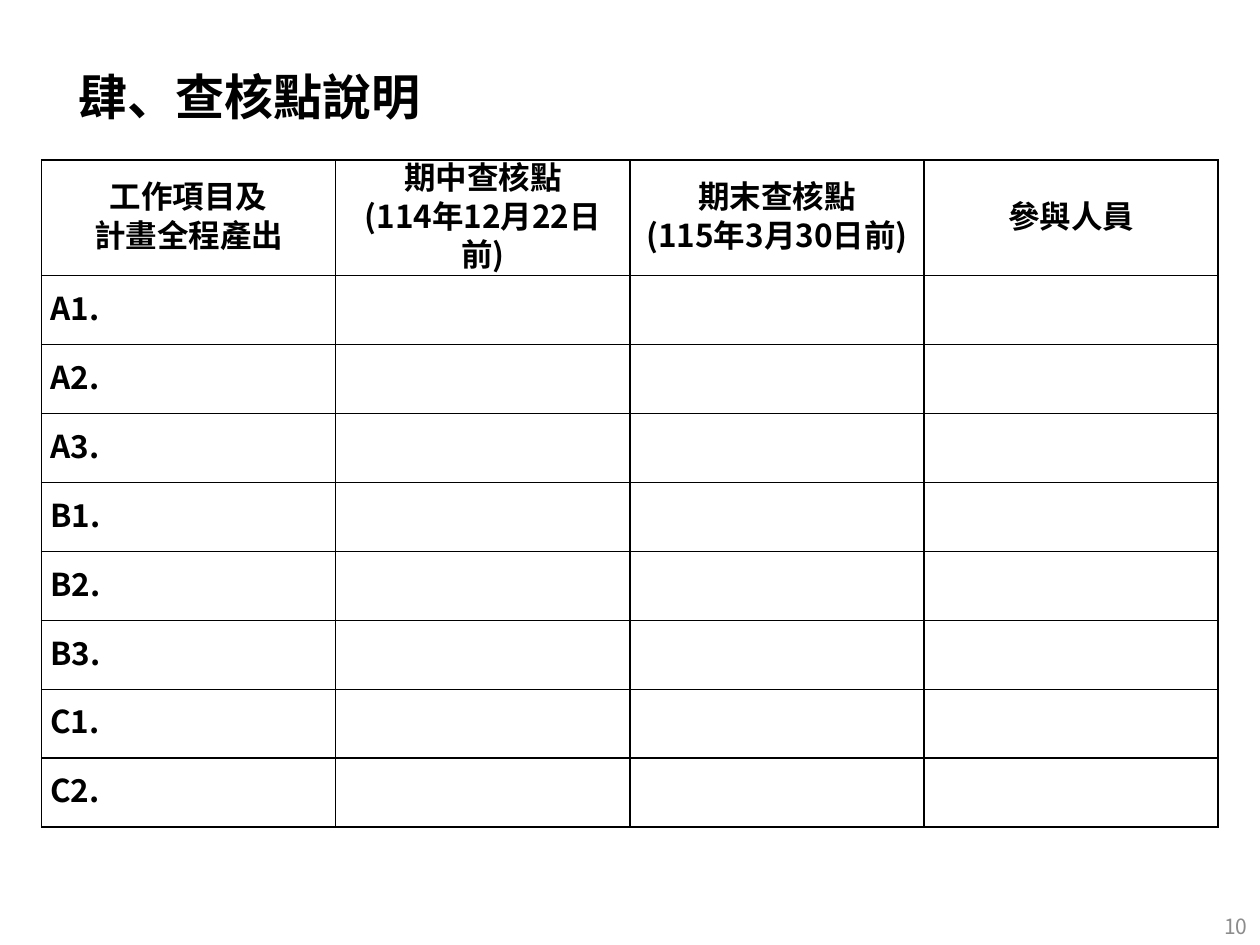
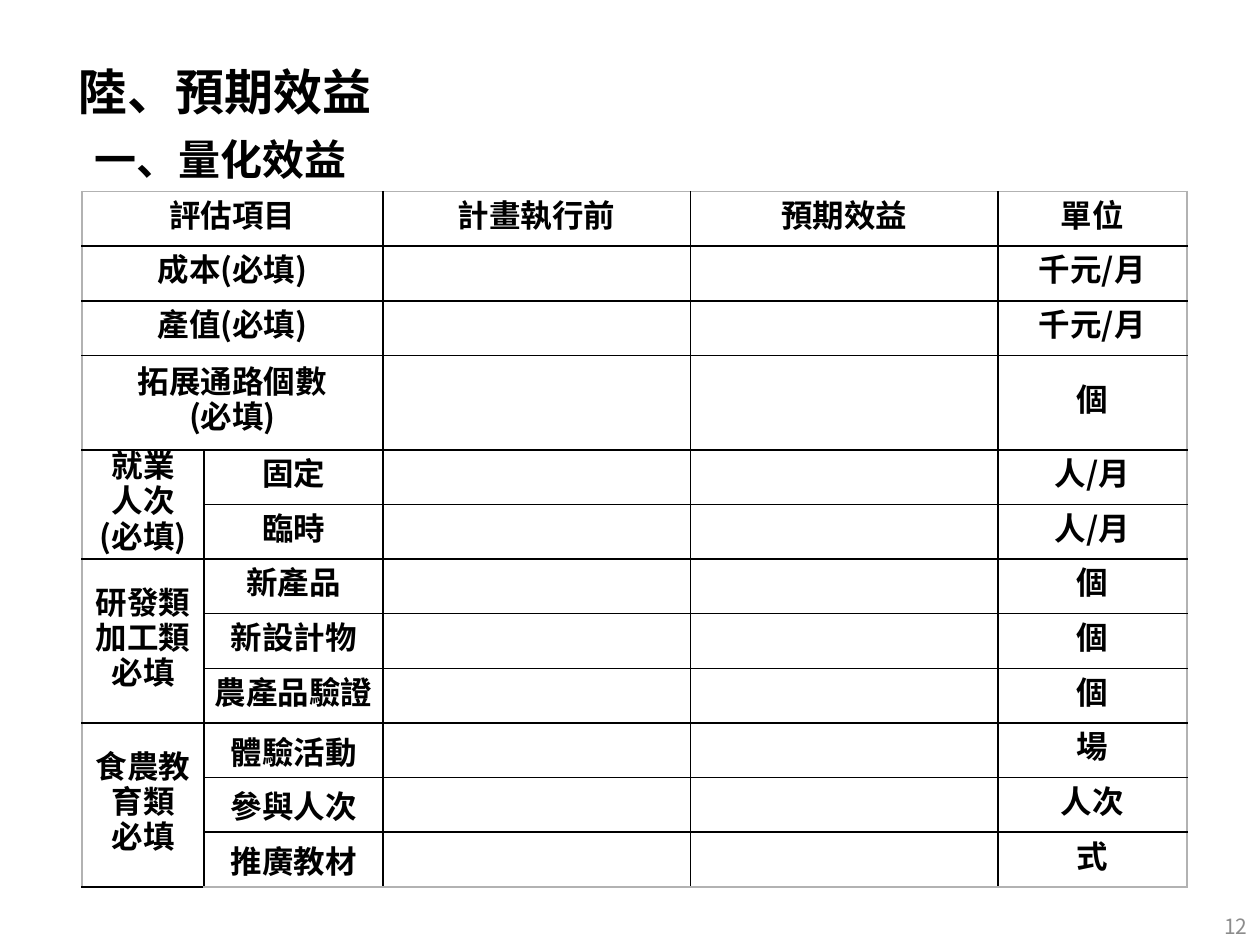
from dataclasses import dataclass

from lxml import etree
from pptx import Presentation
from pptx import util as u
from pptx.dml.color import RGBColor
from pptx.enum import text
from pptx.oxml.ns import qn


@dataclass(frozen=True)
class Theme:
    """Colours, font and type sizes shared by the slides."""
    font: str = "Noto Sans CJK SC"
    ink: str = "000000"
    paper: str = "FFFFFF"
    muted: str = "8C8C8C"
    frame: str = "B2B2B2"
    title: int = 28
    subtitle: int = 24
    body: int = 18
    footer: int = 12


THEME = Theme()
LEFT, CENTER, RIGHT = text.PP_ALIGN.LEFT, text.PP_ALIGN.CENTER, text.PP_ALIGN.RIGHT

CHECK_HEADERS = [
    "工作項目及\n計畫全程產出",
    "期中查核點\n(114年12月22日前)",
    "期末查核點\n(115年3月30日前)",
    "參與人員",
]
WORK_ITEMS = ["A1.", "A2.", "A3.", "B1.", "B2.", "B3.", "C1.", "C2."]

BENEFIT_HEADERS = ["評估項目", "", "計畫執行前", "預期效益", "單位"]
BENEFITS = [
    ("成本(必填)", "", "千元/月"),
    ("產值(必填)", "", "千元/月"),
    ("拓展通路個數\n(必填)", "", "個"),
    ("就業\n人次\n(必填)", "固定", "人/月"),
    ("", "臨時", "人/月"),
    ("研發類\n加工類\n必填", "新產品", "個"),
    ("", "新設計物", "個"),
    ("", "農產品驗證", "個"),
    ("食農教育類\n必填", "體驗活動", "場"),
    ("", "參與人次", "人次"),
    ("", "推廣教材", "式"),
]
WIDE_ROWS = range(4)
GROUPS = [(4, 5), (6, 8), (9, 11)]
NATURAL_SPACING = {(row, 1) for row in range(9, 12)}


def write(frame, content, size, color=THEME.ink, bold=True, align=LEFT, spacing=None):
    """Fill a text frame with one paragraph per line of content."""
    for index, line in enumerate(content.split("\n")):
        para = frame.add_paragraph() if index else frame.paragraphs[0]
        para.alignment = align
        if spacing:
            para.line_spacing = u.Pt(spacing)
        span = para.add_run()
        span.text = line
        span.font.size = u.Pt(size)
        span.font.bold = bold
        span.font.color.rgb = RGBColor.from_string(color)
        span.font.name = THEME.font
        latin = span.font._element.find(qn("a:latin"))
        east_asian = etree.Element(qn("a:ea"), typeface=THEME.font)
        latin.addnext(east_asian)


def place(shape, left, top, width, height):
    """Set the position and size of a shape in inches."""
    shape.left, shape.top = u.Inches(left), u.Inches(top)
    shape.width, shape.height = u.Inches(width), u.Inches(height)


def add_text(page, bounds, content, size, anchor=text.MSO_ANCHOR.TOP, **style):
    """Add a wrapping text box."""
    box = page.shapes.add_textbox(*map(u.Inches, bounds))
    box.text_frame.word_wrap = True
    box.text_frame.vertical_anchor = anchor
    write(box.text_frame, content, size, **style)


def add_page(deck, title, top, width, number):
    """Add a slide with its title and page number."""
    page = deck.slides.add_slide(deck.slide_layouts[5])
    heading = page.shapes.title
    place(heading, 0.52, top, width, 0.57)
    frame = heading.text_frame
    frame.word_wrap = False
    frame.auto_size = text.MSO_AUTO_SIZE.NONE
    frame.vertical_anchor = text.MSO_ANCHOR.TOP
    write(frame, title, THEME.title)
    add_text(page, (7.75, 7.15, 2.25, 0.4), number, THEME.footer,
             anchor=text.MSO_ANCHOR.MIDDLE, color=THEME.muted, bold=False, align=RIGHT)
    return page


def set_border(cell, side, color):
    """Draw one side of a cell as a solid one-point line."""
    line = etree.SubElement(cell._tc.get_or_add_tcPr(), qn(f"a:ln{side}"), w=str(u.Pt(1)))
    fill = etree.SubElement(line, qn("a:solidFill"))
    etree.SubElement(fill, qn("a:srgbClr"), val=color)


def format_cell(cell, side_margin, edge_colors):
    """Give a cell its borders, fill, margins and anchor."""
    for side, color in edge_colors.items():
        set_border(cell, side, color)
    cell.fill.solid()
    cell.fill.fore_color.rgb = RGBColor.from_string(THEME.paper)
    cell.margin_left = cell.margin_right = u.Inches(side_margin)
    cell.margin_top = cell.margin_bottom = 0
    cell.vertical_anchor = text.MSO_ANCHOR.MIDDLE


def add_grid(page, left, top, widths, heights, rows, spacing, side_margin,
             outer=THEME.ink, natural=(), item_align=CENTER):
    """Add a ruled table and return it."""
    bounds = map(u.Inches, (left, top, sum(widths), sum(heights)))
    table = page.shapes.add_table(len(heights), len(widths), *bounds).table
    table.first_row = table.horz_banding = False
    for column, width in zip(table.columns, widths):
        column.width = u.Inches(width)
    for row, height in zip(table.rows, heights):
        row.height = u.Inches(height)
    for r, row in enumerate(rows):
        for c, content in enumerate(row):
            cell = table.cell(r, c)
            on_edge = {"L": c == 0, "R": c == len(widths) - 1,
                       "T": r == 0, "B": r == len(heights) - 1}
            colors = {side: outer if edge else THEME.ink for side, edge in on_edge.items()}
            format_cell(cell, side_margin, colors)
            if content:
                write(cell.text_frame, content, THEME.body,
                      align=item_align if r else CENTER,
                      spacing=None if (r, c) in natural else spacing)
    return table


def add_checkpoints(deck):
    """Build the checkpoint slide."""
    page = add_page(deck, "肆、查核點說明", 0.48, 2.95, "10")
    rows = [CHECK_HEADERS] + [[item, "", "", ""] for item in WORK_ITEMS]
    heights = [0.82] + [(5.2 - 0.82) / len(WORK_ITEMS)] * len(WORK_ITEMS)
    add_grid(page, 0.33, 1.27, [9.34 / 4] * 4, heights, rows, 22, 0.07, item_align=LEFT)


def add_benefits(deck):
    """Build the expected benefits slide."""
    page = add_page(deck, "陸、預期效益", 0.44, 2.56, "12")
    add_text(page, (0.65, 1.01, 9.21, 0.5), "一、量化效益", THEME.subtitle)
    rows = [BENEFIT_HEADERS] + [[group, item, "", "", unit] for group, item, unit in BENEFITS]
    heights = [(5.52 - 0.75) / len(BENEFITS)] * len(rows)
    heights[3] = 0.75
    table = add_grid(page, 0.65, 1.52, [0.97, 1.42, 2.44, 2.44, 1.5], heights, rows, 20, 0.01,
                     outer=THEME.frame, natural=NATURAL_SPACING)
    for row in WIDE_ROWS:
        table.cell(row, 0).merge(table.cell(row, 1))
    for first, last in GROUPS:
        table.cell(first, 0).merge(table.cell(last, 0))


def main():
    """Build and save the deck."""
    deck = Presentation()
    deck.slide_width, deck.slide_height = u.Inches(10), u.Inches(7.5)
    add_checkpoints(deck)
    add_benefits(deck)
    deck.save("out.pptx")


if __name__ == "__main__":
    main()
